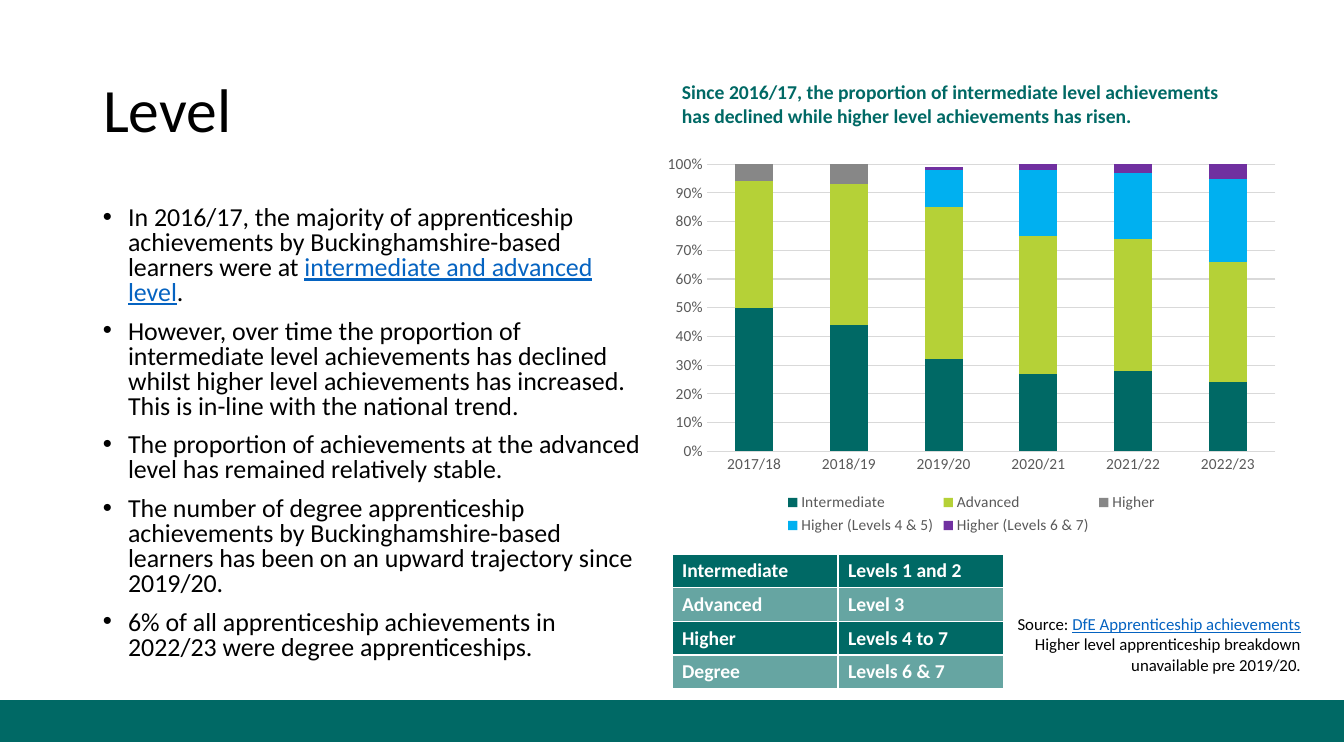
import pptx
import pptx.chart.data
import pptx.dml.color
import pptx.enum.chart
import pptx.enum.shapes
import pptx.enum.text
import pptx.oxml
import pptx.oxml.ns
import pptx.util

PX = 914400 / 100.8
FONT = "Calibri"
TEAL, BLACK, WHITE = "006965", "000000", "FFFFFF"
LINK, GREY, PALE = "0563C1", "595959", "D9D9D9"

POINTS = [
    ["In 2016/17, the majority of apprenticeship achievements by "
     "Buckinghamshire-based learners were at ",
     "intermediate and advanced level", "."],
    ["However, over time the proportion of intermediate level achievements "
     "has declined whilst higher level achievements has increased. This is "
     "in-line with the national trend."],
    ["The proportion of achievements at the advanced level has remained "
     "relatively stable."],
    ["The number of degree apprenticeship achievements by "
     "Buckinghamshire-based learners has been on an upward trajectory since "
     "2019/20."],
    ["6% of all apprenticeship achievements in 2022/23 were degree "
     "apprenticeships."],
]
CLAIM = [["Since 2016/17, the proportion of intermediate level achievements "
          "has declined while higher level achievements has risen."]]
SOURCE = [["Source: ", "DfE Apprenticeship achievements"],
          ["Higher level apprenticeship breakdown unavailable pre 2019/20."]]
LEVELS = [("Intermediate", "Levels 1 and 2"), ("Advanced", "Level 3"),
          ("Higher", "Levels 4 to 7"), ("Degree", "Levels 6 & 7")]
YEARS = ["2017/18", "2018/19", "2019/20", "2020/21", "2021/22", "2022/23"]
SERIES = [
    ("Intermediate", TEAL, [0.5, 0.44, 0.32, 0.27, 0.28, 0.24]),
    ("Advanced", "B5D137", [0.44, 0.49, 0.53, 0.48, 0.46, 0.42]),
    ("Higher", "878787", [0.06, 0.07, None, None, None, None]),
    ("Higher (Levels 4 & 5)", "00B0F0", [None, None, 0.13, 0.23, 0.23, 0.29]),
    ("Higher (Levels 6 & 7)", "7030A0", [None, None, 0.01, 0.02, 0.03, 0.06]),
]


def px(*nums):
    return [pptx.util.Emu(round(n * PX)) for n in nums]


def rgb(code):
    return pptx.dml.color.RGBColor.from_string(code)


def style(font, size, color, bold=False):
    font.name = FONT
    font.size = pptx.util.Pt(size)
    font.bold = bold
    font.color.rgb = rgb(color)


def paint(fill, color):
    fill.solid()
    fill.fore_color.rgb = rgb(color)


def stroke(line, color):
    line.color.rgb = rgb(color)
    line.width = pptx.util.Pt(0.75)


def add_band(slide):
    band = slide.shapes.add_shape(
        pptx.enum.shapes.MSO_SHAPE.RECTANGLE, *px(0, 701, 1344, 40))
    band.shadow.inherit = False
    paint(band.fill, TEAL)
    band.line.color.rgb = rgb(TEAL)
    band.line.width = pptx.util.Pt(1)


def set_title(slide, text):
    title = slide.shapes.title
    title.left, title.top, title.width, title.height = px(93, 40, 1159, 146)
    frame = title.text_frame
    frame.text = text
    frame.vertical_anchor = pptx.enum.text.MSO_ANCHOR.MIDDLE
    para = frame.paragraphs[0]
    para.alignment = pptx.enum.text.PP_ALIGN.LEFT
    para.line_spacing = 0.9
    style(para.runs[0].font, 44, BLACK)


def add_text(slide, box, paras, size, color=BLACK, bold=False):
    """Add a text box; the second run of a paragraph looks like a link."""
    frame = slide.shapes.add_textbox(*px(*box)).text_frame
    frame.word_wrap = True
    for i, parts in enumerate(paras):
        para = frame.paragraphs[0] if i == 0 else frame.add_paragraph()
        for j, part in enumerate(parts):
            run = para.add_run()
            run.text = part
            style(run.font, size, LINK if j == 1 else color, bold)
            run.font.underline = j == 1
    return frame


def add_bullets(frame):
    for para in frame.paragraphs:
        para.line_spacing = 0.8
        para.space_before = pptx.util.Pt(10)
        props = para._p.get_or_add_pPr()
        props.set("marL", "228600")
        props.set("indent", "-228600")
        space = pptx.oxml.ns.nsdecls("a")
        for xml in (f'<a:buFont {space} typeface="Arial"/>',
                    f'<a:buChar {space} char="•"/>'):
            props.append(pptx.oxml.parse_xml(xml))


def fade(fill, part):
    """Set the opacity of a solid fill, in percent."""
    tint = fill._xPr.find(".//" + pptx.oxml.ns.qn("a:srgbClr"))
    space = pptx.oxml.ns.nsdecls("a")
    tint.append(pptx.oxml.parse_xml(
        f'<a:alpha {space} val="{part * 1000}"/>'))


def add_levels(slide):
    table = slide.shapes.add_table(
        len(LEVELS), 2, *px(672, 554, 332, 124)).table
    table.horz_banding = False
    for i, words in enumerate(LEVELS):
        for j, word in enumerate(words):
            cell = table.cell(i, j)
            cell.text = word
            style(cell.text_frame.paragraphs[0].runs[0].font, 14, WHITE, True)
            paint(cell.fill, TEAL)
            if i % 2:
                fade(cell.fill, 60)


def add_bars(slide):
    kinds = pptx.enum.chart
    data = pptx.chart.data.CategoryChartData(number_format="0%")
    data.categories = YEARS
    for name, _, vals in SERIES:
        data.add_series(name, vals)
    chart = slide.shapes.add_chart(
        kinds.XL_CHART_TYPE.COLUMN_STACKED, *px(655, 147, 633, 392),
        data).chart
    style(chart.font, 10, BLACK)
    chart.has_title = False
    chart.has_legend = True
    chart.legend.position = kinds.XL_LEGEND_POSITION.BOTTOM
    chart.legend.include_in_layout = False
    style(chart.legend.font, 11, GREY)

    plot = chart.plots[0]
    plot.gap_width, plot.overlap = 150, 100
    plot.vary_by_categories = False
    for series, (_, color, _) in zip(plot.series, SERIES):
        paint(series.format.fill, color)

    cats, vals = chart.category_axis, chart.value_axis
    for axis in (cats, vals):
        axis.major_tick_mark = kinds.XL_TICK_MARK.NONE
        axis.minor_tick_mark = kinds.XL_TICK_MARK.NONE
        style(axis.tick_labels.font, 11, GREY)
    stroke(cats.format.line, PALE)
    vals.format.line.fill.background()
    vals.minimum_scale, vals.maximum_scale = 0, 1
    vals.major_unit = 0.1
    vals.tick_labels.number_format = "0%"
    vals.tick_labels.number_format_is_linked = False
    vals.has_major_gridlines = True
    stroke(vals.major_gridlines.format.line, PALE)


def main():
    deck = pptx.Presentation()
    deck.slide_width, deck.slide_height = px(1344, 756)
    slide = deck.slides.add_slide(deck.slide_layouts[5])
    add_band(slide)
    set_title(slide, "Level")
    add_bullets(add_text(slide, (93, 202, 562, 480), POINTS, 18.5))
    add_text(slide, (672, 75, 562, 57), CLAIM, 14, TEAL, True)
    source = add_text(slide, (992, 609, 319, 92), SOURCE, 12)
    for para in source.paragraphs:
        para.alignment = pptx.enum.text.PP_ALIGN.RIGHT
    add_levels(slide)
    add_bars(slide)
    deck.save("out.pptx")


if __name__ == "__main__":
    main()
